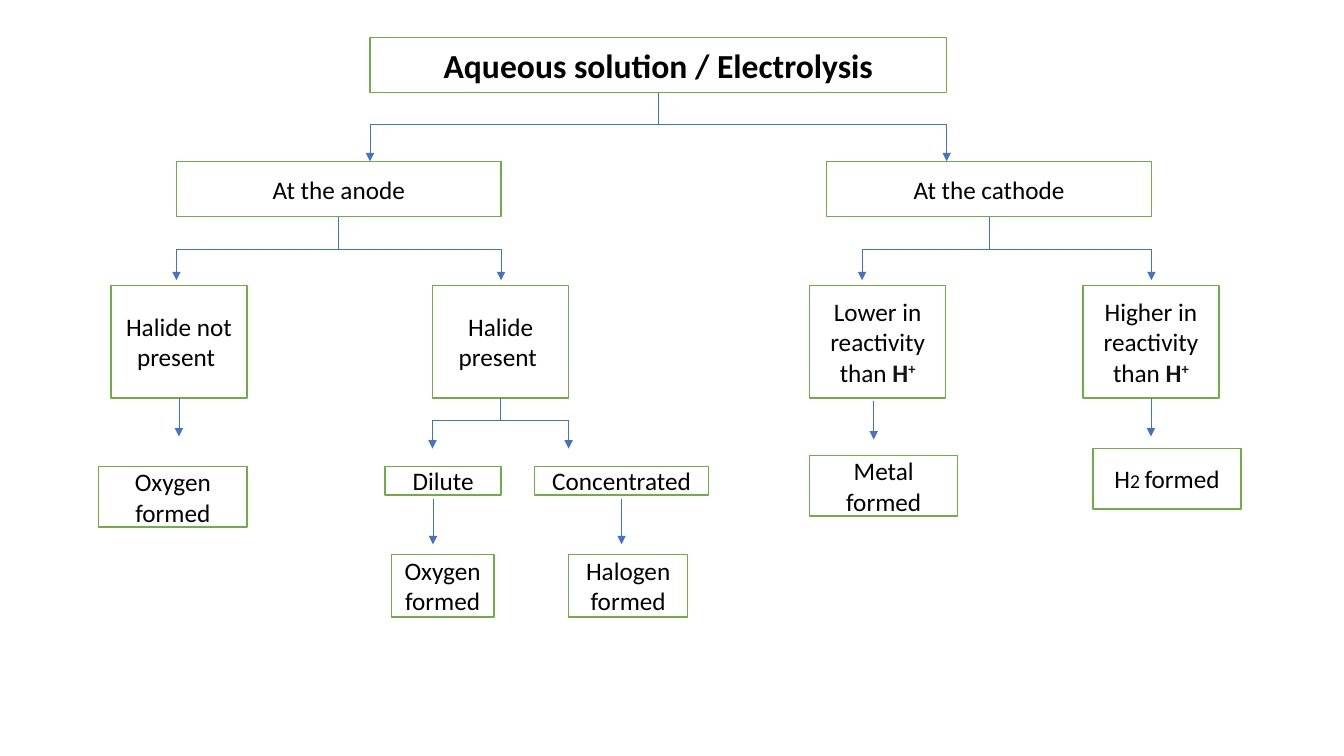
from pptx import Presentation
from pptx.dml.color import RGBColor
from pptx.enum.shapes import MSO_CONNECTOR as Connector, MSO_SHAPE as Shape
from pptx.enum.text import MSO_ANCHOR as Anchor, PP_ALIGN as Align
from pptx.oxml.ns import qn
from pptx.util import Inches, Pt
from lxml.etree import SubElement

# Content: box name -> (row, column left, width, text runs as (text, style))
HALF, LEAF = 3.22, 1.47
CASE = 1.35
BOXES = {
    "title": ("title", 3.67, 5.72, [("Aqueous solution / Electrolysis", "title")]),
    "anode": ("electrode", 1.75, HALF, [("At the anode", "body")]),
    "cathode": ("electrode", 8.2, HALF, [("At the cathode", "body")]),
    "no halide": ("case", 1.1, CASE, [("Halide not present ", "body")]),
    "halide": ("case", 4.29, CASE, [("Halide present ", "body")]),
    "lower": ("case", 8.03, CASE, [("Lower in reactivity than ", "body"), ("H", "ion"), ("+", "charge")]),
    "higher": ("case", 10.74, CASE, [("Higher in reactivity than ", "body"), ("H", "ion"), ("+", "charge")]),
    "oxygen": ("oxygen", 0.98, LEAF, [("Oxygen formed", "body")]),
    "metal": ("metal", 8.03, LEAF, [("Metal formed", "body")]),
    "hydrogen": ("hydrogen", 10.84, LEAF, [("H", "body"), ("2 ", "index"), ("formed", "body")]),
    "dilute": ("strength", 3.82, 1.15, [("Dilute", "body")]),
    "concentrated": ("strength", 5.3, 1.73, [("Concentrated", "body")]),
    "dilute product": ("product", 3.88, 1.02, [("Oxygen formed", "body")]),
    "concentrated product": ("product", 5.64, 1.18, [("Halogen formed", "body")]),
}

# Rows: name -> (top, height)
ROWS = {
    "title": (0.37, 0.55),
    "electrode": (1.6, 0.55),
    "case": (2.83, 1.12),
    "hydrogen": (4.45, 0.6),
    "metal": (4.52, 0.6),
    "oxygen": (4.63, 0.6),
    "strength": (4.63, 0.28),
    "product": (5.5, 0.62),
}

# Forks: parent, stem length, arrow length, inset of the left arm from the box edge
FORKS = [
    ("title", 0.31, 0.37, 0),
    ("anode", 0.32, 0.31, 0),
    ("cathode", 0.32, 0.31, 0.35),
    ("halide", 0.22, 0.28, 0),
]

# Single arrows: parent, shift from its centre, gap below it, length
DROPS = [
    ("no halide", 0, 0, 0.38),
    ("lower", -0.04, 0.03, 0.38),
    ("higher", 0, 0, 0.38),
    ("dilute", -0.1, 0.04, 0.45),
    ("concentrated", 0, 0.04, 0.45),
]

BLACK, INK = RGBColor.from_string("000000"), RGBColor.from_string("141414")
THEME = {
    "fill": RGBColor.from_string("FFFFFF"),
    "border": RGBColor.from_string("70AD47"),
    "arrow": RGBColor.from_string("4472C4"),
    "border width": Pt(1),
    "arrow width": Pt(0.5),
    "font": "Calibri",
    "styles": {
        "title": {"size": Pt(24), "bold": True, "color": BLACK},
        "body": {"size": Pt(18), "bold": False, "color": BLACK},
        "index": {"size": Pt(14), "bold": False, "color": BLACK},
        "ion": {"size": Pt(18), "bold": True, "color": INK},
        "charge": {"size": Pt(18), "bold": True, "color": INK, "baseline": "30000"},
    },
}

presentation = Presentation()
presentation.slide_width, presentation.slide_height = Inches(13.33), Inches(7.5)
slide = presentation.slides.add_slide(presentation.slide_layouts[6])


def add_box(row, left, width, runs):
    top, height = ROWS[row]
    shape = slide.shapes.add_shape(Shape.RECTANGLE, *map(Inches, (left, top, width, height)))
    shape.shadow.inherit = False
    shape.fill.solid()
    shape.fill.fore_color.rgb = THEME["fill"]
    shape.line.color.rgb = THEME["border"]
    shape.line.width = THEME["border width"]
    frame = shape.text_frame
    frame.word_wrap = True
    frame.vertical_anchor = Anchor.MIDDLE
    paragraph = frame.paragraphs[0]
    paragraph.alignment = Align.CENTER
    for text, style_name in runs:
        style = THEME["styles"][style_name]
        run = paragraph.add_run()
        run.text = text
        for name, value in {"name": THEME["font"], "size": style["size"], "bold": style["bold"]}.items():
            setattr(run.font, name, value)
        run.font.color.rgb = style["color"]
        if "baseline" in style:
            run._r.get_or_add_rPr().set("baseline", style["baseline"])


def add_line(x1, y1, x2, y2, arrow=False):
    line = slide.shapes.add_connector(Connector.STRAIGHT, *map(Inches, (x1, y1, x2, y2)))
    line.line.color.rgb = THEME["arrow"]
    line.line.width = THEME["arrow width"]
    if arrow:
        SubElement(line.line._get_or_add_ln(), qn("a:tailEnd"), type="triangle")
    SubElement(line._element.spPr, qn("a:effectLst"))


def edges(name):
    row, left, width, _ = BOXES[name]
    return left, left + width / 2, left + width, sum(ROWS[row])


# Boxes
for box in BOXES.values():
    add_box(*box)

# Forks: stem, bar and two arrows at the parent's sides
for parent, stem, length, inset in FORKS:
    left, centre, right, bottom = edges(parent)
    left, bar = left + inset, bottom + stem
    add_line(centre, bottom, centre, bar)
    add_line(left, bar, right, bar)
    for x in (left, right):
        add_line(x, bar, x, bar + length, arrow=True)

# Single arrows
for parent, shift, gap, length in DROPS:
    _, centre, _, bottom = edges(parent)
    x, start = centre + shift, bottom + gap
    add_line(x, start, x, start + length, arrow=True)

presentation.save("out.pptx")
